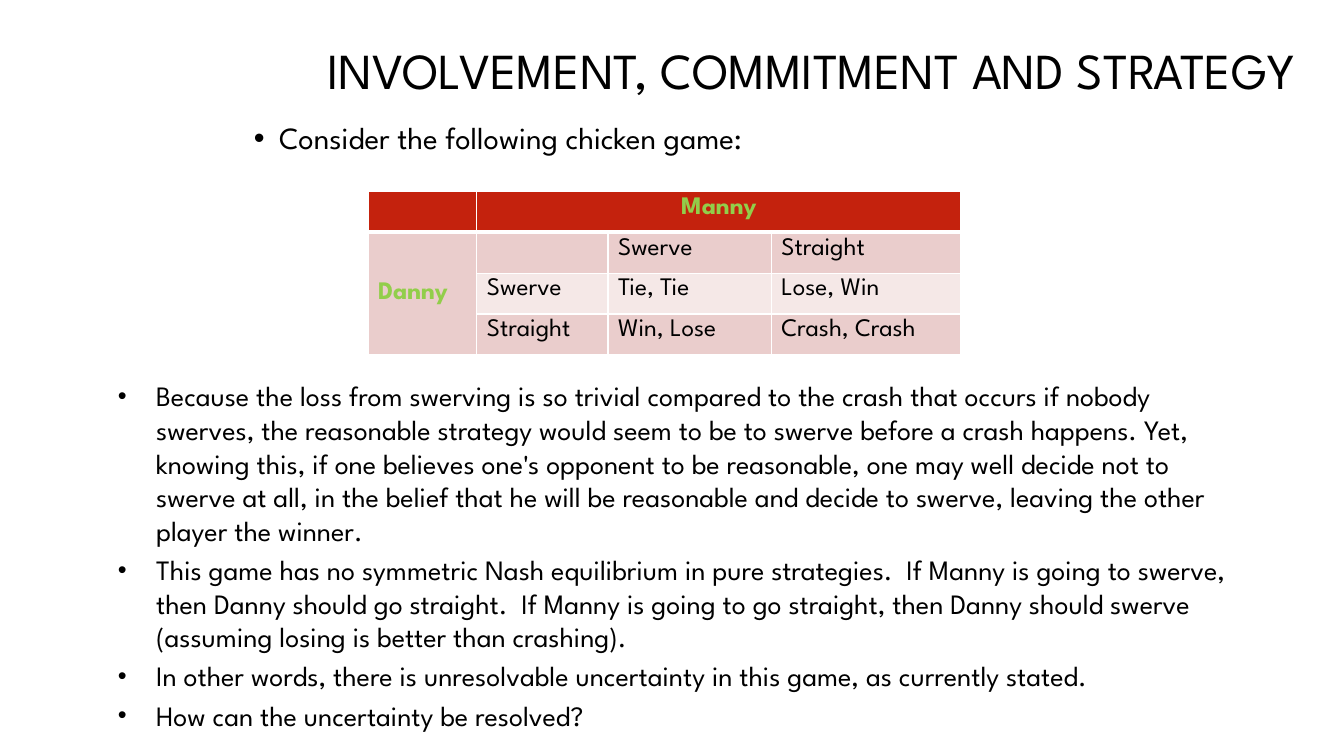
from dataclasses import dataclass

from lxml.etree import SubElement
from pptx import Presentation
from pptx.dml.color import RGBColor
from pptx.enum.text import MSO_ANCHOR, PP_ALIGN
from pptx.oxml.ns import qn
from pptx.util import Inches, Pt

FONT = "League Spartan"
BLACK, WHITE, RED, GREEN = "000000", "FFFFFF", "C4220D", "92CE4A"
DARK_BAND, LIGHT_BAND = "EACDCC", "F5E8E7"
COLUMN_WIDTHS = (1.08, 1.3, 1.62, 1.88)
ROW_HEIGHT = 0.405


@dataclass
class Box:
    left: float
    top: float
    width: float
    height: float

    def lengths(self):
        return [Inches(value) for value in (self.left, self.top, self.width, self.height)]


@dataclass
class BulletList:
    box: Box
    texts: list[str]
    size: float
    indent: float
    bullet_percent: int = 100
    space_before: float = 0
    line_spacing: float = 1.0


GAME = [
    ["", "Manny", "", ""],
    ["Danny", "", "Swerve", "Straight"],
    ["", "Swerve", "Tie, Tie", "Lose, Win"],
    ["", "Straight", "Win, Lose", "Crash, Crash"],
]

BULLET_LISTS = [
    BulletList(Box(2.42, 1.17, 8.5, 0.58), ["Consider the following chicken game:"],
               size=22, indent=0.25, line_spacing=0.9),
    BulletList(Box(1.07, 3.71, 11.21, 3.46), [
        "Because the loss from swerving is so trivial compared to the crash that occurs if "
        "nobody swerves, the reasonable strategy would seem to be to swerve before a crash "
        "happens. Yet, knowing this, if one believes one's opponent to be reasonable, one may "
        "well decide not to swerve at all, in the belief that he will be reasonable and decide "
        "to swerve, leaving the other player the winner.",
        "This game has no symmetric Nash equilibrium in pure strategies.  If Manny is going to "
        "swerve, then Danny should go straight.  If Manny is going to go straight, then Danny "
        "should swerve (assuming losing is better than crashing).",
        "In other words, there is unresolvable uncertainty in this game, as currently stated.",
        "How can the uncertainty be resolved?",
    ], size=20, indent=0.38, bullet_percent=90, space_before=4),
]


def color(value: str) -> RGBColor:
    return RGBColor.from_string(value)


def write(paragraph, text: str, *, size: float = 18, font_color: str = BLACK,
          bold: bool = False, align=PP_ALIGN.LEFT, line_spacing: float = 1.0) -> None:
    paragraph.text = text
    paragraph.alignment = align
    paragraph.line_spacing = line_spacing
    font = paragraph.font
    for target in (font, *(run.font for run in paragraph.runs)):
        target.name = FONT
        target.size = Pt(size)
        target.bold = bold
        target.color.rgb = color(font_color)


def add_bullet(paragraph, indent: float, percent: int) -> None:
    properties = paragraph._p.get_or_add_pPr()
    properties.set("marL", str(Inches(indent)))
    properties.set("indent", str(-Inches(indent)))
    SubElement(properties, qn("a:buSzPct"), val=str(percent * 1000))
    SubElement(properties, qn("a:buFont"), typeface="Arial")
    SubElement(properties, qn("a:buChar"), char="•")


def add_title(slide, text: str, box: Box) -> None:
    title = slide.shapes.title
    title.left, title.top, title.width, title.height = box.lengths()
    frame = title.text_frame
    frame.word_wrap = True
    frame.vertical_anchor = MSO_ANCHOR.MIDDLE
    write(frame.paragraphs[0], text, size=36, align=PP_ALIGN.RIGHT, line_spacing=0.9)


def add_bullet_list(slide, bullets: BulletList) -> None:
    frame = slide.shapes.add_textbox(*bullets.box.lengths()).text_frame
    frame.word_wrap = True
    for index, text in enumerate(bullets.texts):
        paragraph = frame.add_paragraph() if index else frame.paragraphs[0]
        add_bullet(paragraph, bullets.indent, bullets.bullet_percent)
        write(paragraph, text, size=bullets.size, line_spacing=bullets.line_spacing)
        if index:
            paragraph.space_before = Pt(bullets.space_before)


def add_borders(cell, bottom_width: float = 1, top_width: float = 1) -> None:
    """Draw white borders; call before filling, since borders come first in the XML."""
    properties = cell._tc.get_or_add_tcPr()
    for side, width in (("L", 1), ("R", 1), ("T", top_width), ("B", bottom_width)):
        line = SubElement(properties, qn(f"a:ln{side}"), w=str(Pt(width)))
        fill = SubElement(line, qn("a:solidFill"))
        SubElement(fill, qn("a:srgbClr"), val=WHITE)


def cell_fill(row: int, column: int) -> str:
    if row == 0:
        return RED
    return LIGHT_BAND if row == 2 and column > 0 else DARK_BAND


def add_game_table(slide) -> None:
    box = Box(3.65, 1.9, sum(COLUMN_WIDTHS), ROW_HEIGHT * len(GAME))
    table = slide.shapes.add_table(len(GAME), len(COLUMN_WIDTHS), *box.lengths()).table
    for column, width in zip(table.columns, COLUMN_WIDTHS):
        column.width = Inches(width)
    for row_index, texts in enumerate(GAME):
        table.rows[row_index].height = Inches(ROW_HEIGHT)
        for column_index, text in enumerate(texts):
            cell = table.cell(row_index, column_index)
            add_borders(cell, bottom_width=3 if row_index == 0 else 1,
                        top_width=3 if row_index == 1 else 1)
            cell.fill.solid()
            cell.fill.fore_color.rgb = color(cell_fill(row_index, column_index))
            is_player = row_index == 0 or column_index == 0
            write(cell.text_frame.paragraphs[0], text, bold=is_player,
                  font_color=GREEN if is_player else BLACK,
                  align=PP_ALIGN.CENTER if row_index == 0 else PP_ALIGN.LEFT)
    table.cell(0, 1).merge(table.cell(0, 3))
    table.cell(1, 0).merge(table.cell(3, 0))
    table.cell(1, 0).vertical_anchor = MSO_ANCHOR.MIDDLE


def main() -> None:
    presentation = Presentation()
    presentation.slide_width = Inches(13.33)
    presentation.slide_height = Inches(7.5)
    slide = presentation.slides.add_slide(presentation.slide_layouts.get_by_name("Title Only"))
    add_title(slide, "INVOLVEMENT, COMMITMENT AND STRATEGY", Box(1.39, 0.44, 11.56, 0.58))
    add_game_table(slide)
    for bullets in BULLET_LISTS:
        add_bullet_list(slide, bullets)
    presentation.save("out.pptx")


if __name__ == "__main__":
    main()
